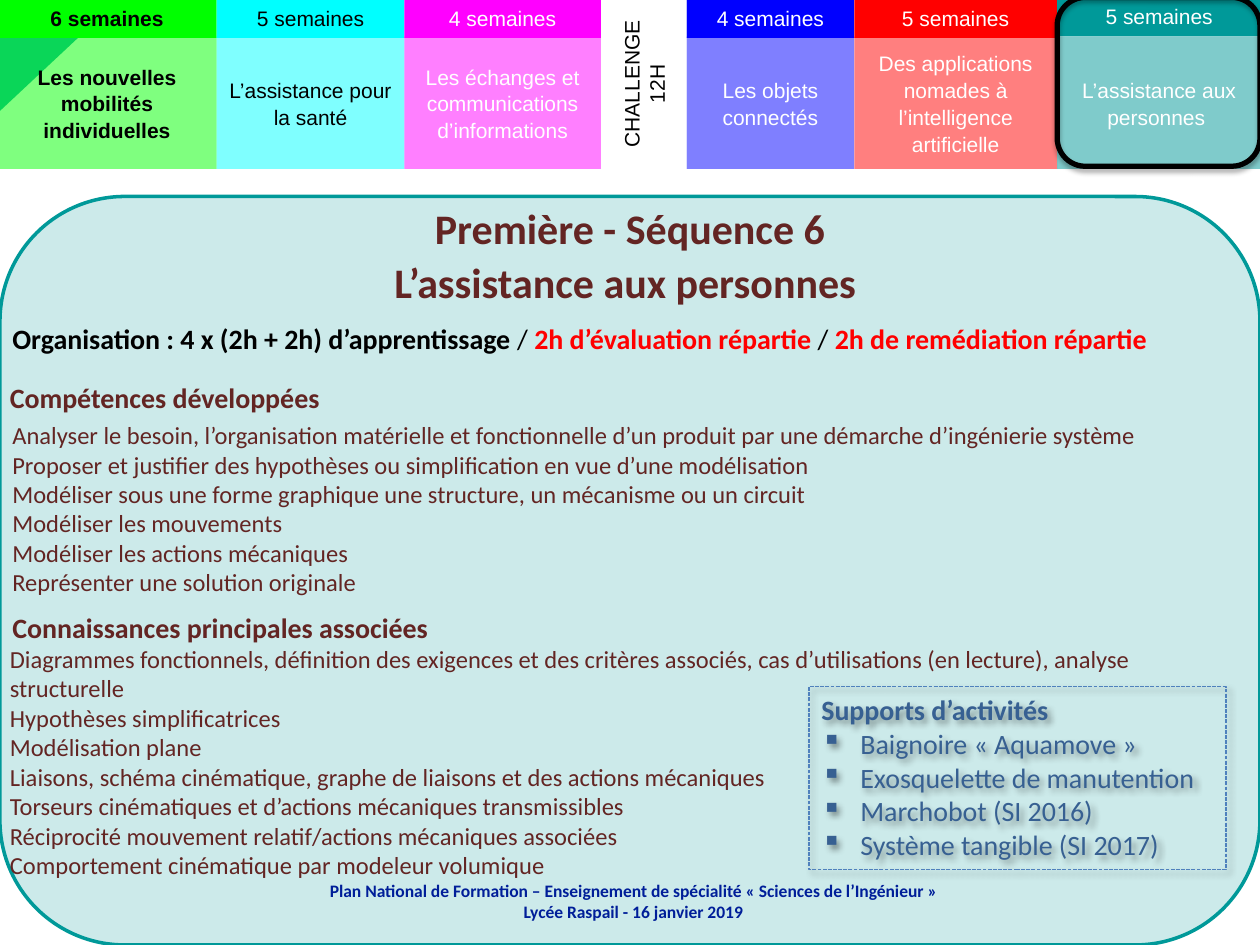
from dataclasses import dataclass

from lxml import etree
from pptx import Presentation
from pptx.dml.color import RGBColor
from pptx.enum.dml import MSO_LINE
from pptx.enum.shapes import MSO_SHAPE
from pptx.enum.text import MSO_ANCHOR, MSO_AUTO_SIZE, PP_ALIGN
from pptx.oxml.ns import qn
from pptx.util import Inches, Pt

RECT, ROUND, TRIANGLE = MSO_SHAPE.RECTANGLE, MSO_SHAPE.ROUNDED_RECTANGLE, MSO_SHAPE.ISOSCELES_TRIANGLE
TOP, MIDDLE = MSO_ANCHOR.TOP, MSO_ANCHOR.MIDDLE
LEFT, CENTER = PP_ALIGN.LEFT, PP_ALIGN.CENTER
FIXED = MSO_AUTO_SIZE.NONE
DASH = MSO_LINE.SQUARE_DOT


@dataclass(frozen=True)
class Theme:
    body_font: str = "Calibri"
    band_font: str = "Arial"
    title: int = 24
    heading: int = 16
    body: int = 14
    band: int = 12
    footer: int = 10
    brown: str = "632523"
    teal: str = "009999"
    corner: str = "16AEB2"
    navy: str = "000099"
    blue: str = "376092"
    dash_blue: str = "4F81BD"
    green: str = "00FF00"
    cyan: str = "00FFFF"
    magenta: str = "FF00FF"
    pure_blue: str = "0000FF"
    red: str = "FF0000"
    black: str = "000000"
    white: str = "FFFFFF"


class SlideBuilder:
    def __init__(self, slide, theme):
        self.slide, self.theme = slide, theme

    def shape(self, kind, box, fill=None, alpha=None, line=None, width=1, shadow=None):
        """Preset shape; alpha in percent, shadow as (alpha, blur, distance, angle)."""
        shape = self.slide.shapes.add_shape(kind, *map(Inches, box))
        shape.shadow.inherit = False
        properties = shape.element.spPr
        if fill:
            shape.fill.solid()
            shape.fill.fore_color.rgb = RGBColor.from_string(fill)
            if alpha:
                color = properties.find(qn("a:solidFill"))[0]
                etree.SubElement(color, qn("a:alpha"), val=str(alpha * 1000))
        else:
            shape.fill.background()
        if line:
            shape.line.color.rgb = RGBColor.from_string(line)
            shape.line.width = Pt(width)
        else:
            shape.line.fill.background()
        if shadow:
            opacity, blur, distance, angle = shadow
            outer = etree.SubElement(
                properties.find(qn("a:effectLst")), qn("a:outerShdw"), blurRad=str(Pt(blur)),
                dist=str(Pt(distance)), dir=str(angle * 60000), rotWithShape="0")
            color = etree.SubElement(outer, qn("a:srgbClr"), val=self.theme.black)
            etree.SubElement(color, qn("a:alpha"), val=str(opacity * 1000))
        return shape

    def style(self, font, size, color, bold=False, name=None):
        font.name = name or self.theme.body_font
        font.size, font.bold = Pt(size), bold
        font.color.rgb = RGBColor.from_string(color)

    def put_text(self, shape, lines, size, color, bold=False, name=None,
                 align=LEFT, anchor=TOP, spacing=None):
        frame = shape.text_frame
        frame.text = "\n".join(lines)
        frame.word_wrap = True
        frame.auto_size = FIXED
        frame.vertical_anchor = anchor
        for paragraph in frame.paragraphs:
            paragraph.alignment = align
            if spacing:
                paragraph.line_spacing = spacing
            for run in paragraph.runs:
                self.style(run.font, size, color, bold, name)
        return frame

    def text(self, box, lines, size, color, **options):
        shape = self.slide.shapes.add_textbox(*map(Inches, box))
        return self.put_text(shape, lines, size, color, **options)

    def title(self, box, lines, behind):
        """Title placeholder, stacked just above the given shape."""
        title = self.slide.shapes.title
        title.left, title.top, title.width, title.height = map(Inches, box)
        behind.element.addnext(title.element)
        frame = self.put_text(title, lines, self.theme.title, self.theme.brown, bold=True, align=CENTER)
        frame.paragraphs[-1].line_spacing = 1.07

    def rich_line(self, box, parts):
        frame = self.text(box, [], self.theme.heading, self.theme.black, anchor=MIDDLE)
        for content, color, bold in parts:
            run = frame.paragraphs[0].add_run()
            run.text = content
            self.style(run.font, self.theme.heading, color, bold)

    def bullet(self, paragraph, indent):
        properties = paragraph._p.get_or_add_pPr()
        properties.set("marL", str(Inches(indent)))
        properties.set("indent", str(-Inches(indent)))
        etree.SubElement(properties, qn("a:buChar"), char="▪")
        for run in paragraph.runs:
            run.font.bold = False

    def band_cell(self, box, content, fill, color, bold=False, alpha=None, anchor=MIDDLE, spacing=None):
        cell = self.shape(RECT, box, fill, alpha)
        self.put_text(cell, [content], self.theme.band, color, bold=bold, name=self.theme.band_font,
                      align=CENTER, anchor=anchor, spacing=spacing)
        return cell


def main():
    theme = Theme()
    deck = Presentation()
    deck.slide_width, deck.slide_height = Inches(10), Inches(7.5)
    page = SlideBuilder(deck.slides.add_slide(deck.slide_layouts[5]), theme)

    # Corner and footer
    corner = page.shape(TRIANGLE, (0, 0, 0.94, 0.88), theme.corner)
    corner.adjustments[0] = 1
    corner.rotation = 180
    footer = page.text(
        (2.38, 6.95, 5.29, 0.4),
        ["Plan National de Formation – Enseignement de spécialité « Sciences de l’Ingénieur »",
         "Lycée Raspail - 16 janvier 2019"],
        theme.footer, theme.navy, bold=True, align=CENTER, anchor=MIDDLE)
    footer.margin_left = footer.margin_right = footer.margin_top = footer.margin_bottom = 0

    # Panel and title
    panel = page.shape(ROUND, (0, 1.56, 10, 5.94), theme.teal, 20, theme.teal, 2)
    page.title((0, 1.56, 10, 0.94), ["Première - Séquence 6", "L’assistance aux personnes "], panel)

    # Organisation
    page.rich_line((0, 2.5, 10, 0.37), [
        ("Organisation : 4 x (2h + 2h) d’apprentissage ", theme.black, True),
        ("/ ", theme.black, False),
        ("2h d’évaluation répartie ", theme.red, True),
        ("/ ", theme.black, False),
        ("2h de remédiation répartie", theme.red, True)])

    # Skills and knowledge
    sections = [
        ("Compétences développées", (-0.02, 2.97, 10, 0.37), (0, 3.28, 10, 1.51), [
            "Analyser le besoin, l’organisation matérielle et fonctionnelle d’un produit "
            "par une démarche d’ingénierie système",
            "Proposer et justifier des hypothèses ou simplification en vue d’une modélisation",
            "Modéliser sous une forme graphique une structure, un mécanisme ou un circuit",
            "Modéliser les mouvements",
            "Modéliser les actions mécaniques",
            "Représenter une solution originale"]),
        ("Connaissances principales associées", (0, 4.8, 10, 0.37), (-0.02, 5.05, 10, 1.99), [
            "Diagrammes fonctionnels, définition des exigences et des critères associés, "
            "cas d’utilisations (en lecture), analyse structurelle",
            "Hypothèses simplificatrices",
            "Modélisation plane",
            "Liaisons, schéma cinématique, graphe de liaisons et des actions mécaniques",
            "Torseurs cinématiques et d’actions mécaniques transmissibles",
            "Réciprocité mouvement relatif/actions mécaniques associées",
            "Comportement cinématique par modeleur volumique"])]
    for heading, heading_box, items_box, items in sections:
        page.text(heading_box, [heading], theme.heading, theme.brown, bold=True)
        page.text(items_box, items, theme.body, theme.brown, anchor=MIDDLE)

    # Activity supports
    supports = page.shape(RECT, (6.42, 5.45, 3.31, 1.45), line=theme.dash_blue, width=0.75,
                          shadow=(40, 4, 3, 45))
    supports.line.dash_style = DASH
    support_text = page.put_text(
        supports,
        ["Supports d’activités", "Baignoire « Aquamove »", "Exosquelette de manutention",
         "Marchobot (SI 2016)", "Système tangible (SI 2017)"],
        theme.heading, theme.blue, bold=True)
    for paragraph in support_text.paragraphs[1:]:
        page.bullet(paragraph, 0.31)

    # Year band: left, right, duration, topic, fill, text colour, bold
    sequences = [
        (-0.02, 1.72, "6 semaines", "Les nouvelles mobilités individuelles", theme.green, theme.black, True),
        (1.72, 3.21, "5 semaines", "L’assistance pour la santé", theme.cyan, theme.black, False),
        (3.21, 4.77, "4 semaines", "Les échanges et communications d’informations",
         theme.magenta, theme.white, False),
        (5.45, 6.78, "4 semaines", "Les objets connectés", theme.pure_blue, theme.white, False),
        (6.78, 8.39, "5 semaines", "Des applications nomades à l’intelligence artificielle",
         theme.red, theme.white, False),
        (8.39, 10.01, "5 semaines", "L’assistance aux personnes ", theme.teal, theme.white, False)]
    for left, right, duration, topic, fill, color, bold in sequences:
        width = right - left
        current = fill == theme.teal
        page.band_cell((left, 0.29, width, 1.05), topic, fill, color, bold, alpha=50, spacing=1.07)
        page.band_cell((left, -0.02 if current else -0.01, width, 0.31), duration, fill, color, bold,
                       anchor=TOP if current else MIDDLE)
    challenge = page.band_cell((4.77, -0.01, 0.68, 1.35), "CHALLENGE 12H", theme.white, theme.black, alpha=50)
    challenge.element.txBody.find(qn("a:bodyPr")).set("vert", "vert270")

    # Frame around the current sequence
    page.shape(ROUND, (8.39, -0.02, 1.61, 1.34), line=theme.black, width=3, shadow=(35, 3.1, 1.8, 90))

    deck.save("out.pptx")


if __name__ == "__main__":
    main()
